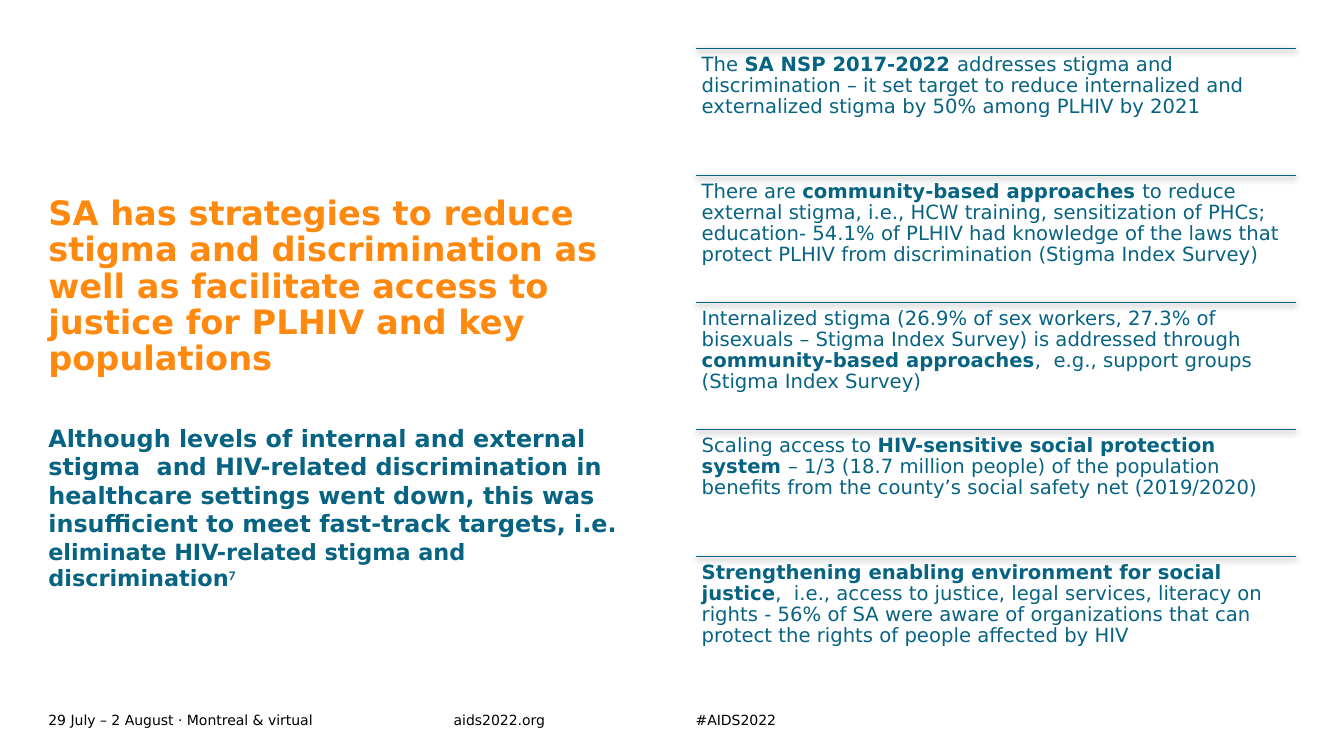
from lxml import etree
from pptx import Presentation
from pptx import util as u
from pptx.dml.color import RGBColor
from pptx.enum import shapes, text
from pptx.oxml import ns

TEAL = RGBColor(0x07, 0x63, 0x82)
ORANGE = RGBColor(0xFF, 0x89, 0x0E)
BLACK = RGBColor(0, 0, 0)
FONT = "DejaVu Sans"

# A run is (text, changes to the format of its box)
BOLD = {"bold": True}
TITLE = [("SA has strategies to reduce stigma and discrimination as well as "
          "facilitate access to justice for PLHIV and key populations", {})]
BODY = [
    ("Although levels of internal and external stigma  and HIV-related "
     "discrimination in healthcare settings went down, this was insufficient "
     "to meet fast-track targets, i.e. ", {}),
    ("eliminate HIV-related stigma and discrimination", {"size": 16}),
    ("7", {"size": 16, "font": "Calibri", "base": 30}),
]
POINTS = [
    [("The ", {}), ("SA NSP 2017-2022 ", BOLD),
     ("addresses stigma and discrimination – it set target to reduce "
      "internalized and externalized stigma by 50% among PLHIV by 2021", {})],
    [("There are ", {}), ("community-based approaches ", BOLD),
     ("to reduce external stigma, i.e., HCW training, sensitization of PHCs;  "
      "education- 54.1% of PLHIV had knowledge of the laws that protect PLHIV "
      "from discrimination (Stigma Index Survey)", {})],
    [("Internalized stigma (26.9% of sex workers, 27.3% of bisexuals – Stigma "
      "Index Survey) is addressed through ", {}),
     ("community-based approaches", BOLD),
     (",  e.g., support groups  (Stigma Index Survey)", {})],
    [("Scaling access to ", {}),
     ("HIV-sensitive social protection system ", BOLD),
     ("– 1/3 (18.7 million people) of the population benefits from the "
      "county’s social safety net (2019/2020)", {})],
    [("Strengthening enabling environment for social justice", BOLD),
     (",  i.e., access to justice, legal services, literacy on rights - 56% of "
      "SA were aware of organizations that can protect the rights of people "
      "affected by HIV", {})],
]
FOOTER = [
    ("29 July – 2 August · Montreal & virtual", 0.48, 4.02),
    ("aids2022.org", 4.5, 1.93),
    ("#AIDS2022", 6.9, 1.93),
]

LEFT, RIGHT, WIDTH = 0.48, 6.9, 5.95
TOP, STEP = 0.48, 1.26


def place(shape, x, y, w, h):
    shape.left, shape.top, shape.width, shape.height = map(u.Inches, (x, y, w, h))
    return shape


def write(shape, runs, size=14, color=TEAL, bold=False, font=FONT, space=1.0,
          inset=0, anchor=text.MSO_ANCHOR.TOP):
    frame = shape.text_frame
    frame.word_wrap = True
    frame.auto_size = text.MSO_AUTO_SIZE.NONE
    frame.vertical_anchor = anchor
    frame.margin_left = frame.margin_right = u.Inches(inset)
    frame.margin_top = frame.margin_bottom = u.Inches(inset)
    para = frame.paragraphs[0]
    para.alignment = text.PP_ALIGN.LEFT
    para.line_spacing = space
    para.space_before = u.Pt(0)
    for words, change in runs:
        look = {"size": size, "bold": bold, "font": font, **change}
        run = para.add_run()
        run.text = words
        run.font.size = u.Pt(look["size"])
        run.font.bold = look["bold"]
        run.font.name = look["font"]
        run.font.color.rgb = color
        if "base" in look:
            run.font._element.set("baseline", str(look["base"] * 1000))


def plain(shape):
    """Take the bullet and the indent off the first paragraph."""
    props = shape.text_frame.paragraphs[0]._p.get_or_add_pPr()
    props.set("marL", "0")
    props.set("indent", "0")
    etree.SubElement(props, ns.qn("a:buNone"))


def rule(slide, y):
    """Draw a thin line with a soft shadow below it."""
    line = slide.shapes.add_connector(
        shapes.MSO_CONNECTOR.STRAIGHT, u.Inches(RIGHT), u.Inches(y),
        u.Inches(RIGHT + WIDTH), u.Inches(y))
    line.line.color.rgb = TEAL
    line.line.width = u.Pt(0.5)
    effects = etree.SubElement(line._element.spPr, ns.qn("a:effectLst"))
    shadow = etree.SubElement(
        effects, ns.qn("a:outerShdw"), blurRad=str(u.Pt(4.5)),
        dist=str(u.Pt(1.5)), dir="5400000", algn="ctr", rotWithShape="0")
    shade = etree.SubElement(shadow, ns.qn("a:srgbClr"), val="000000")
    etree.SubElement(shade, ns.qn("a:alpha"), val="63000")


def main():
    deck = Presentation()
    deck.slide_width, deck.slide_height = u.Inches(13.33), u.Inches(7.5)
    slide = deck.slides.add_slide(deck.slide_layouts[1])

    def box(x, y, w, h):
        return place(slide.shapes.add_textbox(0, 0, 0, 0), x, y, w, h)

    for words, x, w in FOOTER:
        write(box(x, 7.02, w, 0.24), [(words, {})], size=10, color=BLACK,
              anchor=text.MSO_ANCHOR.MIDDLE)

    title = place(slide.shapes.title, LEFT, 1.82, WIDTH, 1.93)
    write(title, TITLE, size=24, color=ORANGE, bold=True, space=0.9,
          anchor=text.MSO_ANCHOR.BOTTOM)
    body = place(slide.placeholders[1], LEFT, 4.2, WIDTH, 1.75)
    plain(body)
    write(body, BODY, size=17, bold=True)

    for i, point in enumerate(POINTS):
        y = TOP + i * STEP
        rule(slide, y)
        write(box(RIGHT, y, WIDTH, STEP), point, space=0.9, inset=0.06)

    deck.save("out.pptx")


if __name__ == "__main__":
    main()
